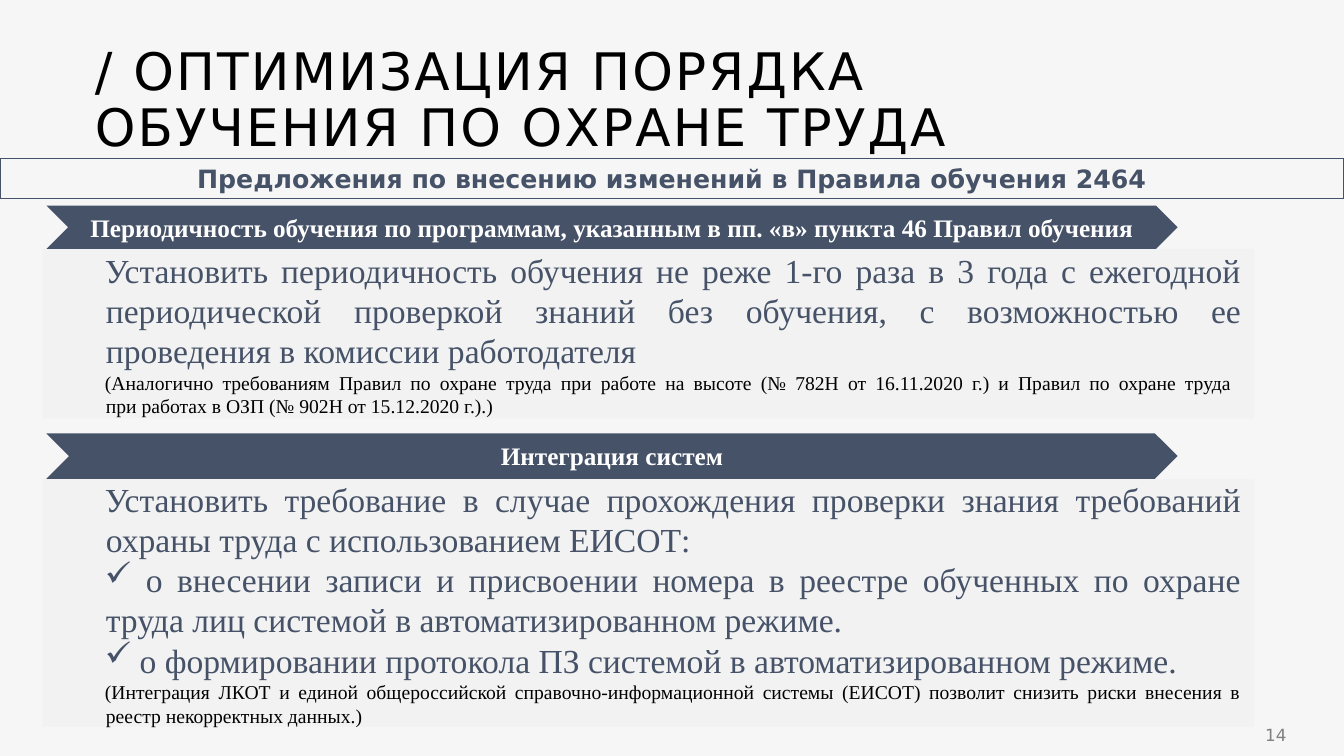
from lxml.etree import SubElement
from pptx import Presentation
from pptx.dml.color import RGBColor
from pptx.enum.shapes import MSO_SHAPE
from pptx.enum.text import MSO_ANCHOR, PP_ALIGN
from pptx.oxml.ns import qn
from pptx.util import Inches, Pt

# Content
TITLE = [("/ ", 37.4), ("ОПТИМИЗАЦИЯ ПОРЯДКА ОБУЧЕНИЯ ПО ОХРАНЕ ТРУДА", 36.9)]
BAND = "Предложения по внесению изменений в Правила обучения 2464"
PAGE_NUMBER = "14"
SECTIONS = [
    {
        "heading": "Периодичность обучения по программам, указанным в пп. «в» пункта 46 Правил обучения",
        "top": 2.04, "heading_height": 0.43, "panel_height": 1.68,
        "proposal": "Установить периодичность обучения не реже 1-го раза в 3 года с ежегодной "
                    "периодической проверкой знаний без обучения, с возможностью ее проведения "
                    "в комиссии работодателя",
        "points": [],
        "note": "(Аналогично требованиям Правил по охране труда при работе на высоте "
                "(№ 782Н от 16.11.2020 г.) и Правил по охране труда \n"
                "при работах в ОЗП (№ 902Н от 15.12.2020 г.).)",
    },
    {
        "heading": "Интеграция систем",
        "top": 4.3, "heading_height": 0.45, "panel_height": 2.46,
        "proposal": "Установить требование в случае прохождения проверки знания требований "
                    "охраны труда с использованием ЕИСОТ:",
        "points": [
            " о внесении записи и присвоении номера в реестре обученных по охране труда лиц "
            "системой в автоматизированном режиме.",
            " о формировании протокола ПЗ системой в автоматизированном режиме.",
        ],
        "note": "(Интеграция ЛКОТ и единой общероссийской справочно-информационной системы "
                "(ЕИСОТ) позволит снизить риски внесения в реестр некорректных данных.)",
    },
]
SANS, SERIF = "DejaVu Sans", "Times New Roman"
NAVY, BLACK, WHITE, GREY = "465267", "000000", "FFFFFF", "808080"
PAPER, PANEL = "F6F6F6", "F2F2F2"


def color(value):
    return RGBColor.from_string(value)


def write(paragraph, text, size=18, font=SERIF, ink=NAVY, bold=False,
          align=PP_ALIGN.LEFT, spacing=0, indent=False, bullet=None):
    paragraph.alignment = align
    properties = paragraph._p.get_or_add_pPr()
    if indent:
        properties.set("marL", str(Inches(0.5)))
        properties.set("indent", str(Inches(-0.01)))
    if bullet:
        SubElement(properties, qn("a:buChar")).set("char", bullet)
    for number, line in enumerate(text.split("\n")):
        if number:
            paragraph.add_line_break()
        run = paragraph.add_run()
        run.text = line
        run.font.size = Pt(size)
        run.font.name = font
        run.font.bold = bold
        run.font.color.rgb = color(ink)
        if spacing:
            run._r.get_or_add_rPr().set("spc", str(int(spacing * 100)))


def add_block(kind, left, top, width, height, fill=None, line=None,
              anchor=MSO_ANCHOR.TOP, inset=(0.13, 0.07)):
    block = slide.shapes.add_shape(kind, Inches(left), Inches(top), Inches(width), Inches(height))
    block.shadow.inherit = False
    if fill:
        block.fill.solid()
        block.fill.fore_color.rgb = color(fill)
    else:
        block.fill.background()
    if line:
        block.line.color.rgb = color(line)
        block.line.width = Pt(1)
    else:
        block.line.fill.background()
    frame = block.text_frame
    frame.word_wrap = True
    frame.vertical_anchor = anchor
    frame.margin_left = frame.margin_right = Inches(inset[0])
    frame.margin_top = frame.margin_bottom = Inches(inset[1])
    return frame


prs = Presentation()
prs.slide_width, prs.slide_height = Inches(13.33), Inches(7.5)
slide = prs.slides.add_slide(prs.slide_layouts[5])
slide.background.fill.solid()
slide.background.fill.fore_color.rgb = color(PAPER)

# Title
title = slide.shapes.title
title.left, title.top = Inches(0.84), Inches(0.4)
title.width, title.height = Inches(9.42), Inches(0.8)
title.text_frame.word_wrap = True
title.text_frame.vertical_anchor = MSO_ANCHOR.TOP
heading_line = title.text_frame.paragraphs[0]
heading_line.line_spacing = 0.9
for part, size in TITLE:
    write(heading_line, part, size=size, font=SANS, ink=BLACK, spacing=1.5)

# Full-width band
band = add_block(MSO_SHAPE.RECTANGLE, 0, 1.57, 13.33, 0.4, line=NAVY, inset=(0.1, 0.05))
write(band.paragraphs[0], BAND, font=SANS, bold=True, align=PP_ALIGN.CENTER)

# Sections: a panel under each chevron heading
for section in SECTIONS:
    panel_top = section["top"] + section["heading_height"]
    panel = add_block(MSO_SHAPE.RECTANGLE, 0.42, panel_top, 12.02, section["panel_height"],
                      fill=PANEL, anchor=MSO_ANCHOR.MIDDLE)
    body = {"align": PP_ALIGN.JUSTIFY, "indent": True}
    write(panel.paragraphs[0], section["proposal"], size=24, **body)
    for point in section["points"]:
        write(panel.add_paragraph(), point, size=24, bullet="✓", **body)
    write(panel.add_paragraph(), section["note"], size=14, ink=BLACK, **body)

    heading = add_block(MSO_SHAPE.CHEVRON, 0.46, section["top"], 11.22,
                        section["heading_height"], fill=NAVY)
    write(heading.paragraphs[0], section["heading"], ink=WHITE, bold=True, align=PP_ALIGN.CENTER)

# Page number
page = slide.shapes.add_textbox(Inches(12.45), Inches(7.14), Inches(0.54), Inches(0.3)).text_frame
page.word_wrap = True
write(page.paragraphs[0], PAGE_NUMBER, size=12, font=SANS, ink=GREY)

prs.save("out.pptx")
